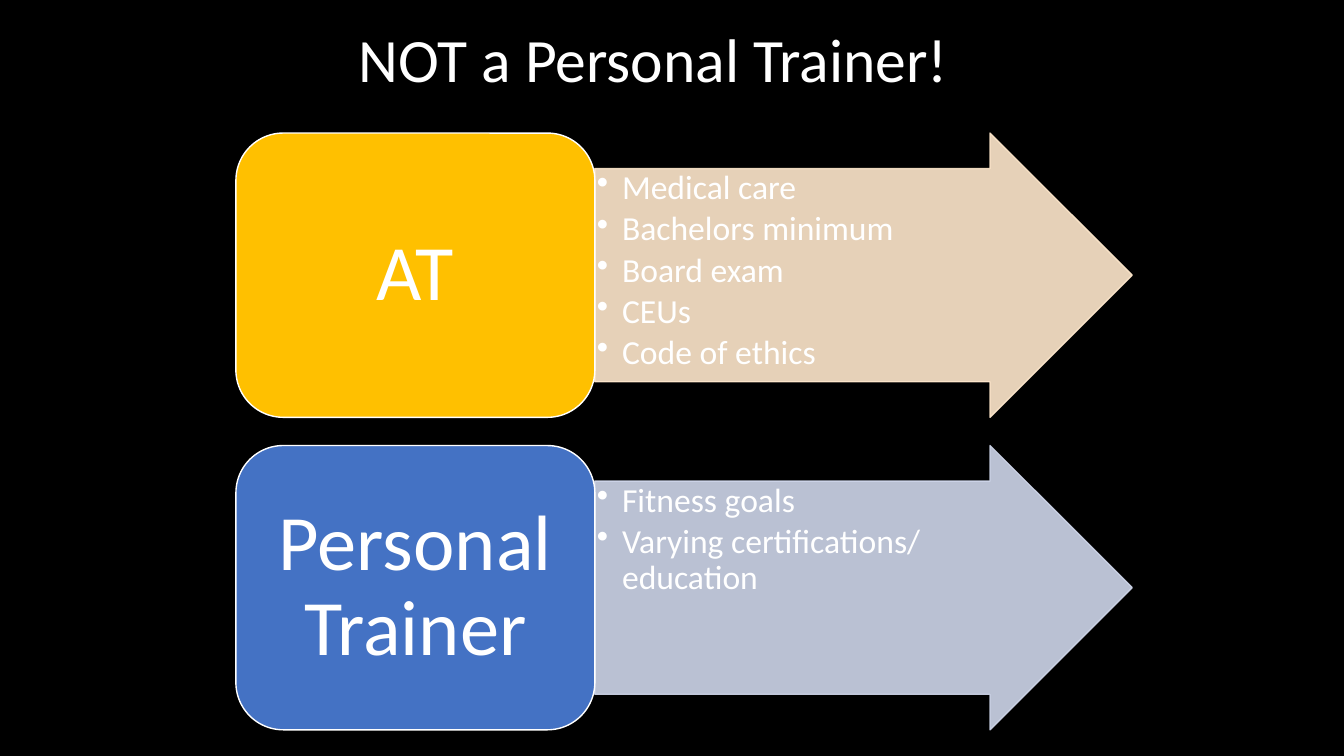
from dataclasses import dataclass

from lxml import etree
from pptx import Presentation
from pptx.dml.color import RGBColor
from pptx.enum.shapes import MSO_SHAPE
from pptx.enum.text import MSO_ANCHOR, PP_ALIGN
from pptx.oxml.ns import qn
from pptx.shapes.autoshape import Shape
from pptx.slide import Slide
from pptx.text.text import TextFrame
from pptx.util import Inches, Pt

RIGHT_ARROW = MSO_SHAPE.RIGHT_ARROW
ROUNDED_RECTANGLE = MSO_SHAPE.ROUNDED_RECTANGLE
TOP, MIDDLE = MSO_ANCHOR.TOP, MSO_ANCHOR.MIDDLE
LEFT, CENTER = PP_ALIGN.LEFT, PP_ALIGN.CENTER


@dataclass(frozen=True)
class Theme:
    font: str = "Calibri"
    background: str = "000000"
    text: str = "FFFFFF"
    outline: str = "FFFFFF"
    gold: str = "FFC000"
    pale_gold: str = "FFE8CC"
    blue: str = "4472C4"
    pale_blue: str = "CFD6EA"
    title_size: float = 44
    role_size: float = 56
    trait_size: float = 24
    trait_gap: float = 3.6
    line_spacing: float = 0.9
    outline_width: float = 1
    arrow_opacity: int = 90


@dataclass(frozen=True)
class Role:
    name: str
    traits: tuple[str, ...]
    color: str
    arrow_color: str


THEME = Theme()
ROLES = (
    Role(
        "AT",
        ("Medical care", "Bachelors minimum", "Board exam", "CEUs", "Code of ethics"),
        THEME.gold,
        THEME.pale_gold,
    ),
    Role(
        "Personal Trainer",
        ("Fitness goals", "Varying certifications/ education"),
        THEME.blue,
        THEME.pale_blue,
    ),
)
ROLE_LEFT, ROLE_WIDTH = 2.34, 3.56
ARROW_WIDTH = 5.33
FIRST_TOP, ROW_HEIGHT, ROW_PITCH = 1.32, 2.82, 3.1
BULLET_INDENT = 0.25


def write_lines(
    frame: TextFrame,
    lines: tuple[str, ...],
    size: float,
    align: PP_ALIGN,
    anchor: MSO_ANCHOR,
    margins: tuple[float, float, float, float],
) -> None:
    frame.word_wrap = True
    frame.vertical_anchor = anchor
    frame.margin_left, frame.margin_top, frame.margin_right, frame.margin_bottom = map(
        Inches, margins
    )
    for index, line in enumerate(lines):
        paragraph = frame.paragraphs[0] if index == 0 else frame.add_paragraph()
        paragraph.text = line
        paragraph.alignment = align
        paragraph.line_spacing = THEME.line_spacing
        paragraph.font.name = THEME.font
        paragraph.font.size = Pt(size)
        paragraph.font.color.rgb = RGBColor.from_string(THEME.text)


def add_bullets(frame: TextFrame) -> None:
    for paragraph in frame.paragraphs:
        paragraph.level = 1
        paragraph.space_after = Pt(THEME.trait_gap)
        properties = paragraph._p.get_or_add_pPr()
        properties.set("marL", str(Inches(BULLET_INDENT)))
        properties.set("indent", str(-Inches(BULLET_INDENT)))
        bullet = etree.Element(qn("a:buChar"), char="•")
        properties.find(qn("a:spcAft")).addnext(bullet)


def add_block(
    slide: Slide, kind: MSO_SHAPE, left: float, top: float, width: float, fill: str, line: str
) -> Shape:
    block = slide.shapes.add_shape(
        kind, Inches(left), Inches(top), Inches(width), Inches(ROW_HEIGHT)
    )
    block.shadow.inherit = False
    block.fill.solid()
    block.fill.fore_color.rgb = RGBColor.from_string(fill)
    block.line.color.rgb = RGBColor.from_string(line)
    block.line.width = Pt(THEME.outline_width)
    return block


def fade(block: Shape, opacity: int) -> None:
    for color in block._element.spPr.iter(qn("a:srgbClr")):
        etree.SubElement(color, qn("a:alpha"), val=str(opacity * 1000))


def add_role(slide: Slide, role: Role, top: float) -> None:
    arrow = add_block(
        slide, RIGHT_ARROW, ROLE_LEFT + ROLE_WIDTH, top, ARROW_WIDTH,
        role.arrow_color, role.arrow_color,
    )
    arrow.adjustments[0] = 0.75
    arrow.adjustments[1] = 0.5
    fade(arrow, THEME.arrow_opacity)
    write_lines(
        arrow.text_frame, role.traits, THEME.trait_size, LEFT, TOP, (0.02, 0.02, 0.72, 0.02)
    )
    add_bullets(arrow.text_frame)

    label = add_block(
        slide, ROUNDED_RECTANGLE, ROLE_LEFT, top, ROLE_WIDTH, role.color, THEME.outline
    )
    write_lines(
        label.text_frame, (role.name,), THEME.role_size, CENTER, MIDDLE, (0.23, 0.12, 0.23, 0.12)
    )


def main() -> None:
    deck = Presentation()
    deck.slide_width, deck.slide_height = Inches(13.33), Inches(7.5)
    slide = deck.slides.add_slide(deck.slide_layouts[6])
    slide.background.fill.solid()
    slide.background.fill.fore_color.rgb = RGBColor.from_string(THEME.background)

    title = slide.shapes.add_textbox(Inches(3.46), Inches(0), Inches(9), Inches(1.25))
    write_lines(
        title.text_frame, ("NOT a Personal Trainer!",), THEME.title_size, LEFT, MIDDLE,
        (0.1, 0.05, 0.1, 0.05),
    )
    for row, role in enumerate(ROLES):
        add_role(slide, role, FIRST_TOP + row * ROW_PITCH)
    deck.save("out.pptx")


if __name__ == "__main__":
    main()
